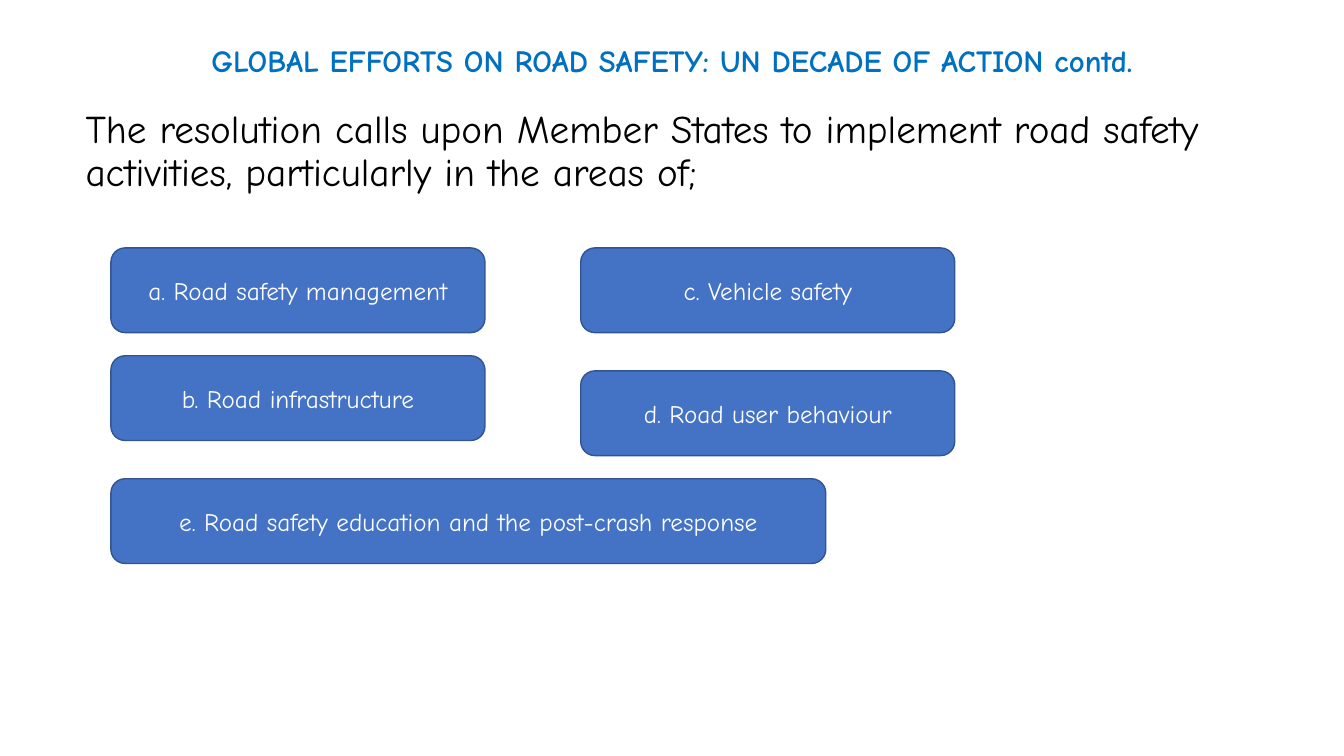
from pptx import Presentation
from pptx.dml.color import RGBColor
from pptx.enum.shapes import MSO_SHAPE
from pptx.enum.text import MSO_ANCHOR, PP_ALIGN
from pptx.util import Inches, Pt

FONT = "Comic Neue"
LEFT_COLUMN, RIGHT_COLUMN = 1.1, 5.76
AREA_WIDTH, WIDE_AREA_WIDTH, AREA_HEIGHT = 3.71, 7.09, 0.84

AREAS = [
    ("a. Road safety management", LEFT_COLUMN, 2.46, AREA_WIDTH),
    ("b. Road infrastructure", LEFT_COLUMN, 3.53, AREA_WIDTH),
    ("c. Vehicle safety", RIGHT_COLUMN, 2.46, AREA_WIDTH),
    ("d. Road user behaviour", RIGHT_COLUMN, 3.68, AREA_WIDTH),
    ("e. Road safety education and the post-crash response",
     LEFT_COLUMN, 4.75, WIDE_AREA_WIDTH),
]


def color(value):
    return RGBColor.from_string(value)


def write(frame, text, *, size, fill, bold=False, align=PP_ALIGN.LEFT,
          anchor=MSO_ANCHOR.TOP, line_spacing=None, space_before=None):
    frame.word_wrap = True
    frame.vertical_anchor = anchor
    para = frame.paragraphs[0]
    para.alignment = align
    para.line_spacing = line_spacing
    para.space_before = space_before
    span = para.add_run()
    span.text = text
    span.font.name = FONT
    span.font.size = Pt(size)
    span.font.bold = bold
    span.font.color.rgb = color(fill)


def add_text(page, text, left, top, width, height, **text_format):
    box = page.shapes.add_textbox(
        Inches(left), Inches(top), Inches(width), Inches(height))
    write(box.text_frame, text, line_spacing=0.9, space_before=Pt(10),
          **text_format)


def add_area(page, text, left, top, width):
    box = page.shapes.add_shape(
        MSO_SHAPE.ROUNDED_RECTANGLE,
        Inches(left), Inches(top), Inches(width), Inches(AREA_HEIGHT))
    box.shadow.inherit = False
    box.fill.solid()
    box.fill.fore_color.rgb = color("4472C4")
    box.line.color.rgb = color("325491")
    box.line.width = Pt(1)
    write(box.text_frame, text, size=18, fill="FFFFFF",
          align=PP_ALIGN.CENTER, anchor=MSO_ANCHOR.MIDDLE)


def main():
    deck = Presentation()
    deck.slide_width, deck.slide_height = Inches(13.33), Inches(7.5)
    page = deck.slides.add_slide(deck.slide_layouts[6])
    add_text(page, "The resolution calls upon Member States to implement road "
             "safety activities, particularly in the areas of;",
             0.75, 1.04, 11.5, 1.18, size=28, fill="000000")
    for area in AREAS:
        add_area(page, *area)
    add_text(page, "GLOBAL EFFORTS ON ROAD SAFETY: UN DECADE OF ACTION contd.",
             0.68, 0.41, 11.97, 0.61, size=22, fill="0070C0", bold=True,
             align=PP_ALIGN.CENTER)
    deck.save("out.pptx")


if __name__ == "__main__":
    main()
